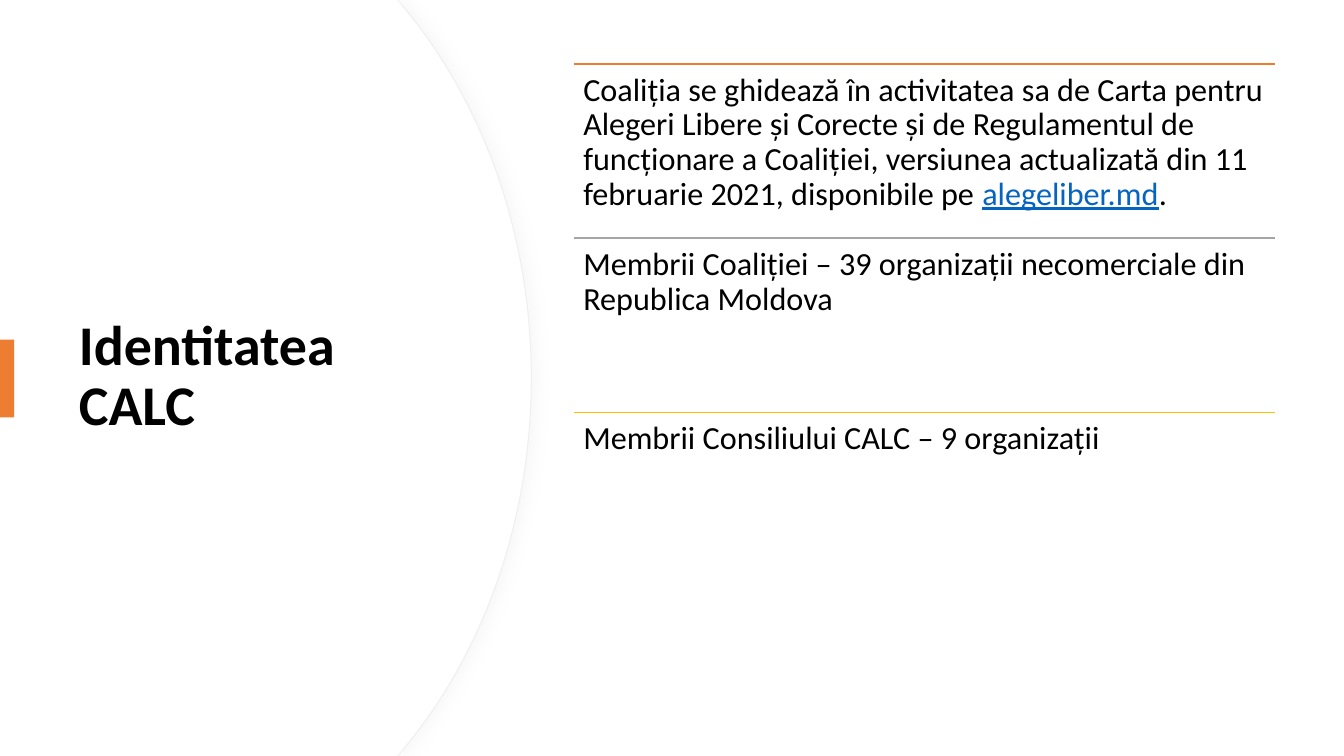
from lxml import etree
from pptx import Presentation
from pptx.dml.color import RGBColor
from pptx.enum.lang import MSO_LANGUAGE_ID
from pptx.enum.shapes import MSO_CONNECTOR, MSO_SHAPE
from pptx.enum.text import MSO_ANCHOR
from pptx.oxml.ns import qn
from pptx.util import Cm, Pt

ROMANIAN = MSO_LANGUAGE_ID.ROMANIAN
STRAIGHT = MSO_CONNECTOR.STRAIGHT
RECTANGLE = MSO_SHAPE.RECTANGLE
TOP = MSO_ANCHOR.TOP
MIDDLE = MSO_ANCHOR.MIDDLE

PAGE_WIDTH, PAGE_HEIGHT = 33.87, 19.05


def color(value):
    return RGBColor.from_string(value)


def add_span(para, text, font="Calibri", size=23, fill="000000", bold=False, underline=False):
    span = para.add_run()
    span.text = text
    span.font.name = font
    span.font.size = Pt(size)
    span.font.bold = bold
    span.font.underline = underline
    span.font.language_id = ROMANIAN
    span.font.color.rgb = color(fill)


def panel_outline(right):
    upper = [(0, 0), (10.01, 0), (right - 3.2, 0.2), (right - 1.22, 2.59), (right, 5.89)]
    lower = [(x, PAGE_HEIGHT - y) for x, y in reversed(upper)]
    return [*upper, (right, PAGE_HEIGHT / 2), *lower]


def bend(shape, first, count):
    segments = list(shape._element.iter(qn("a:lnTo")))
    for start in range(first, first + 3 * count, 3):
        curve = etree.Element(qn("a:cubicBezTo"))
        segments[start].addprevious(curve)
        for segment in segments[start:start + 3]:
            curve.append(segment[0])
            segment.getparent().remove(segment)


class SlideBuilder:
    accent = "ED7D31"
    inset = 0.24

    def __init__(self, page):
        self.page = page

    def style(self, shape, fill, line=None):
        shape.shadow.inherit = False
        shape.fill.solid()
        shape.fill.fore_color.rgb = color(fill)
        if line:
            shape.line.color.rgb = color(line)
            shape.line.width = Pt(0.75)
        else:
            shape.line.fill.background()

    def panel(self, right, line=None):
        points = [(Cm(x), Cm(y)) for x, y in panel_outline(right)]
        builder = self.page.shapes.build_freeform(*points[0], scale=1.0)
        builder.add_line_segments(points[1:], close=True)
        shape = builder.convert_to_shape()
        bend(shape, first=2, count=2)
        self.style(shape, "FFFFFF", line)
        return shape

    def soft_shadow(self, shape, fill):
        effects = shape._element.spPr.find(qn("a:effectLst"))
        shadow = etree.SubElement(
            effects, qn("a:outerShdw"), blurRad=str(Pt(10)), dist=str(Pt(3)),
            dir="0", algn="l", rotWithShape="0")
        tone = etree.SubElement(shadow, qn("a:srgbClr"), val=fill)
        etree.SubElement(tone, qn("a:alpha"), val="20000")

    def bar(self, left, top, width, height):
        shape = self.page.shapes.add_shape(RECTANGLE, Cm(left), Cm(top), Cm(width), Cm(height))
        self.style(shape, self.accent)

    def rule(self, left, top, width, line):
        connector = self.page.shapes.add_connector(
            STRAIGHT, Cm(left), Cm(top), Cm(left + width), Cm(top))
        connector.line.color.rgb = color(line)
        connector.line.width = Pt(1)
        etree.SubElement(connector._element.spPr, qn("a:effectLst"))

    def text(self, left, top, width, height, spans, anchor=TOP):
        box = self.page.shapes.add_textbox(Cm(left), Cm(top), Cm(width), Cm(height))
        frame = box.text_frame
        frame.word_wrap = True
        frame.vertical_anchor = anchor
        frame.margin_left = frame.margin_right = Cm(self.inset)
        frame.margin_top = frame.margin_bottom = Cm(self.inset)
        para = frame.paragraphs[0]
        para.line_spacing = 0.9
        for words, options in spans:
            add_span(para, words, **options)


def main():
    deck = Presentation()
    deck.slide_width, deck.slide_height = Cm(PAGE_WIDTH), Cm(PAGE_HEIGHT)
    slide = SlideBuilder(deck.slides.add_slide(deck.slide_layouts[6]))

    slide.soft_shadow(slide.panel(13.39, line="EFEFEF"), "D9D9D9")
    slide.panel(13.36)
    slide.text(1.75, 3.23, 10, 12.57,
               [("Identitatea CALC", {"size": 40, "bold": True})], anchor=MIDDLE)
    slide.bar(0, 8.56, 0.36, 1.96)

    statements = [
        (slide.accent, [
            ("Coaliția se ghidează în activitatea sa de Carta pentru Alegeri Libere şi Corecte "
             "şi de Regulamentul de funcționare a Coaliției, versiunea actualizată din "
             "11 februarie 2021, disponibile pe ", {}),
            ("alegeliber.md", {"fill": "0563C1", "underline": True}),
            (".", {})]),
        ("A5A5A5", [
            ("Membrii Coaliției – 39 organizații necomerciale din Republica Moldova", {})]),
        ("FFC000", [("Membrii Consiliului CALC – 9 organizații", {})]),
    ]
    left, first_top, width, row_height = 14.46, 1.61, 17.68, 4.39
    for row, (line, spans) in enumerate(statements):
        top = first_top + row * row_height
        slide.rule(left, top, width, line)
        slide.text(left, top, width, row_height, spans)

    deck.save("out.pptx")


if __name__ == "__main__":
    main()
